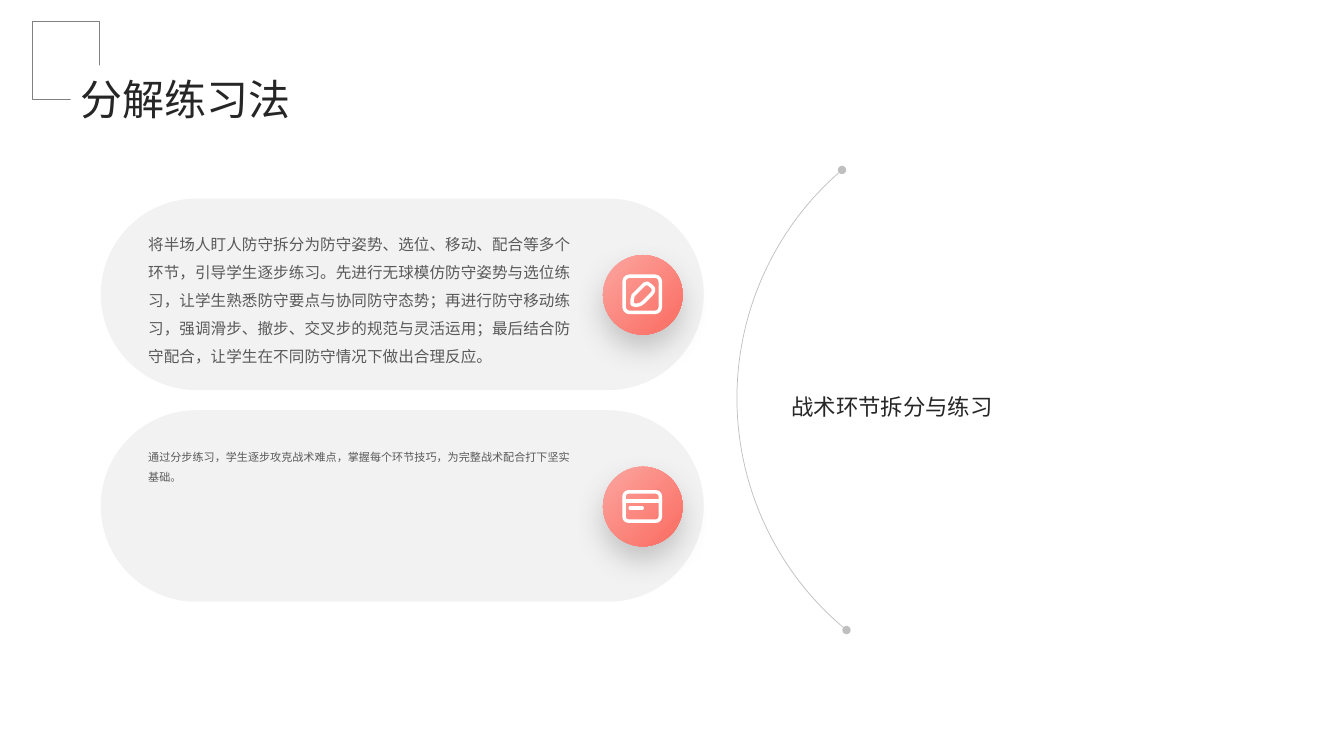
"""Build the slide on practising tactics step by step."""
import pptx
import pptx.util
import pptx.dml.color
import pptx.enum.shapes
import pptx.enum.text
import pptx.oxml
from lxml import etree
from pptx.oxml.ns import qn

PX = 9144
KIND = pptx.enum.shapes.MSO_SHAPE
FIT = pptx.enum.text.MSO_AUTO_SIZE
MID = pptx.enum.text.MSO_ANCHOR.MIDDLE
TOP = pptx.enum.text.MSO_ANCHOR.TOP
THEME = {
    "font": "Noto Sans CJK SC",
    "ink": "262626", "body": "595959", "pill": "F2F2F2", "white": "FFFFFF",
    "arc": "BFBFBF", "frame": "808080", "glow": ("FCA6A0", "FA6B60"),
    "title": 30, "label": 16, "long": 11.1, "short": 7.9,
    "hair": 0.5, "thin": 0.75, "icon": 2.5,
}


def hue(name):
    return pptx.dml.color.RGBColor.from_string(THEME[name])


def style(shape, fill=None, line=None, width="icon"):
    if fill:
        shape.fill.solid()
        shape.fill.fore_color.rgb = hue(fill)
    else:
        shape.fill.background()
    if line:
        shape.line.color.rgb = hue(line)
        shape.line.width = pptx.util.Pt(THEME[width])
    else:
        shape.line.fill.background()
    shape.shadow.inherit = False
    return shape


deck = pptx.Presentation()
deck.slide_width, deck.slide_height = 1333 * PX, 750 * PX
slide = deck.slides.add_slide(deck.slide_layouts[6])
shapes = slide.shapes

arc = shapes.add_shape(KIND.ARC, 731 * PX, 97 * PX, 596 * PX, 596 * PX)
style(arc, line="arc", width="hair")
arc.adjustments[0], arc.adjustments[1] = 186.34, 30.33
arc._element.spPr.find(qn("a:xfrm")).set("flipH", "1")
for end in ("a:headEnd", "a:tailEnd"):
    etree.SubElement(arc.line._get_or_add_ln(), qn(end), type="oval")

for top, high in ((197, 36), (407, 29)):
    pill = shapes.add_shape(KIND.ROUNDED_RECTANGLE, 100 * PX, top * PX, 598 * PX, 190 * PX)
    style(pill, fill="pill").adjustments[0] = 0.5

    disc = shapes.add_shape(KIND.OVAL, 598 * PX, (top + 56) * PX, 79 * PX, 79 * PX)
    style(disc)
    disc.fill.gradient()
    disc.fill.gradient_angle = 315
    for stop, tone in zip(disc.fill.gradient_stops, THEME["glow"]):
        stop.color.rgb = pptx.dml.color.RGBColor.from_string(tone)
    glow = etree.SubElement(
        disc._element.spPr.find(qn("a:effectLst")), qn("a:outerShdw"),
        blurRad="254000", dist="127000", dir="5400000", algn="t", rotWithShape="0")
    tint = etree.SubElement(glow, qn("a:srgbClr"), val=THEME["body"])
    etree.SubElement(tint, qn("a:alpha"), val="30000")

    edge = shapes.add_shape(
        KIND.ROUNDED_RECTANGLE, 619 * PX, (top + 95 - high // 2) * PX, 36 * PX, high * PX)
    style(edge, line="white").adjustments[0] = 0.15

dots = [
    (627, 302), (627, 297), (628, 293), (630, 291), (637, 284), (639, 282), (642, 281),
    (645, 283), (648, 286), (648, 289), (646, 292), (638, 300), (635, 302), (631, 303),
]
path = shapes.build_freeform(*dots[0], scale=PX)
path.add_line_segments(dots[1:], close=True)
style(path.convert_to_shape(), line="white")

for left, right, row in ((619, 655, 497), (625, 637, 504)):
    bar = shapes.add_connector(
        pptx.enum.shapes.MSO_CONNECTOR.STRAIGHT, left * PX, row * PX, right * PX, row * PX)
    bar.line.color.rgb = hue("white")
    bar.line.width = pptx.util.Pt(THEME["icon"])
    bar.line._get_or_add_ln().set("cap", "rnd")
    etree.SubElement(bar._element.spPr, qn("a:effectLst"))

corner = shapes.add_shape(KIND.RECTANGLE, 32 * PX, 21 * PX, 67 * PX, 78 * PX)
style(corner, line="frame", width="thin")
mask = shapes.add_shape(KIND.RECTANGLE, 70 * PX, 65 * PX, 61 * PX, 50 * PX)
style(mask, fill="white")

texts = [
    ((147, 234, 421, 118), "long", "body", 1.5, MID, FIT.SHAPE_TO_FIT_TEXT,
     "将半场人盯人防守拆分为防守姿势、选位、移动、配合等多个环节，引导学生逐步练习。"
     "先进行无球模仿防守姿势与选位练习，让学生熟悉防守要点与协同防守态势；"
     "再进行防守移动练习，强调滑步、撤步、交叉步的规范与灵活运用；"
     "最后结合防守配合，让学生在不同防守情况下做出合理反应。"),
    ((147, 444, 421, 33), "short", "body", 1.5, MID, FIT.SHAPE_TO_FIT_TEXT,
     "通过分步练习，学生逐步攻克战术难点，掌握每个环节技巧，为完整战术配合打下坚实基础。"),
    ((785, 249, 470, 296), "label", "ink", 1.5, MID, FIT.NONE, "战术环节拆分与练习"),
    ((80, 68, 1110, 46), "title", "ink", 1.1, TOP, FIT.SHAPE_TO_FIT_TEXT, "分解练习法"),
]
for place, size, tone, space, anchor, fit, words in texts:
    frame = shapes.add_textbox(*(n * PX for n in place)).text_frame
    format = {
        "word_wrap": True, "auto_size": fit, "vertical_anchor": anchor,
        "margin_left": 0, "margin_top": 0, "margin_right": 0, "margin_bottom": 0,
    }
    for key, value in format.items():
        setattr(frame, key, value)
    para = frame.paragraphs[0]
    para.line_spacing = space
    run = para.add_run()
    run.text = words
    for key, value in {"name": THEME["font"], "size": pptx.util.Pt(THEME[size])}.items():
        setattr(run.font, key, value)
    run.font.color.rgb = hue(tone)
    etree.SubElement(run._r.get_or_add_rPr(), qn("a:ea"), typeface=THEME["font"])

deck.save("out.pptx")
